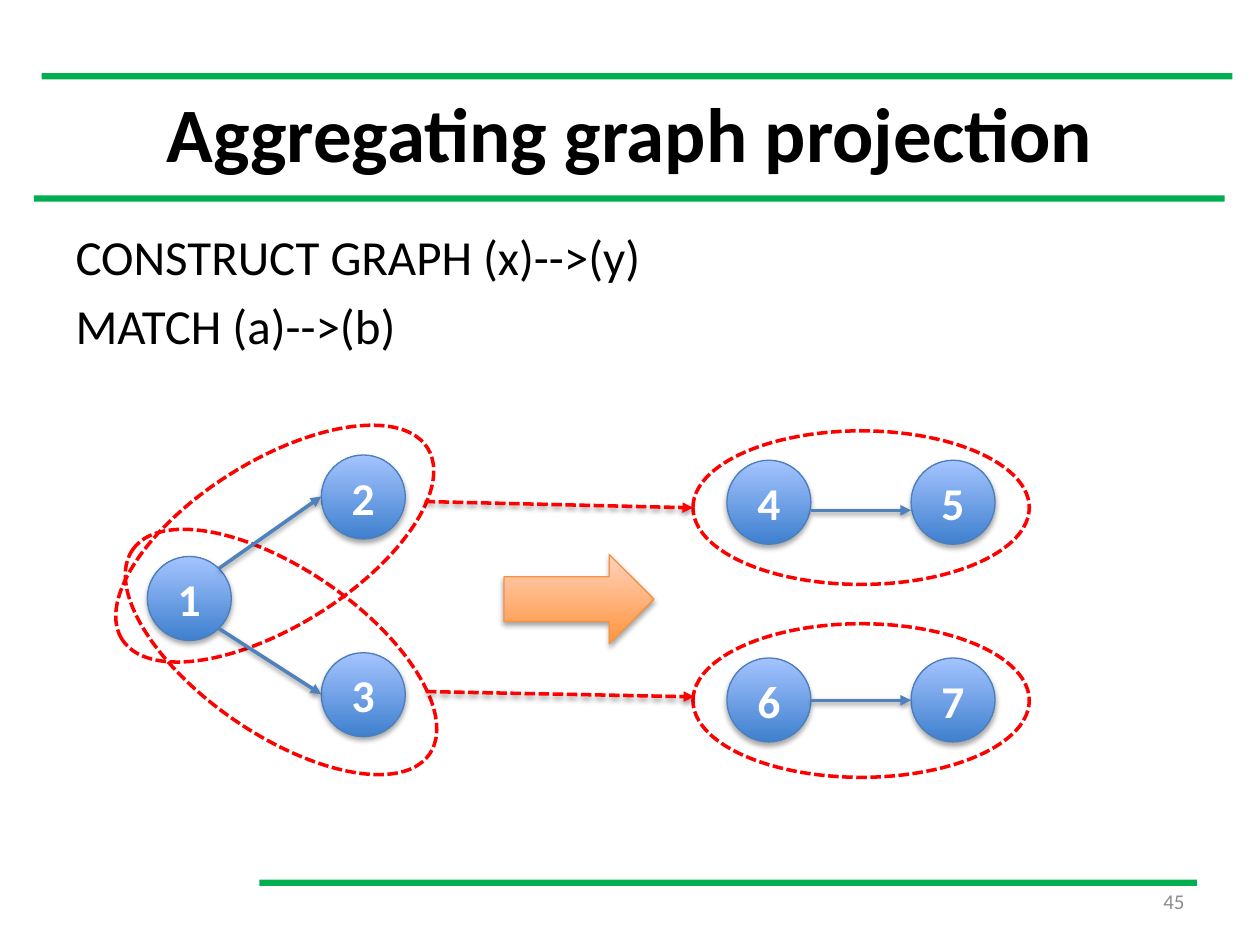
from dataclasses import dataclass

from pptx import Presentation
from pptx import oxml
from pptx import util as u
from pptx.dml import color
from pptx.enum import dml, shapes, text
from pptx.oxml import ns

Pt = u.Pt
RGB = color.RGBColor.from_string


@dataclass(frozen=True)
class Theme:
    font: str = "Calibri"
    ink: str = "000000"
    white: str = "FFFFFF"
    muted: str = "8C8C8C"
    rule: str = "00B050"
    edge: str = "4F81BD"
    group: str = "FF0000"
    node_fill: tuple = ("3F80CE", "A4C4FF")
    node_line: str = "4B7EBC"
    arrow_fill: tuple = ("FF953E", "FFD2BD")
    arrow_line: str = "F69240"
    title_size: int = 44
    body_size: int = 28
    node_size: int = 26
    number_size: int = 12


theme = Theme()


def write_text(para, content, size, ink=theme.ink, bold=False, align=None):
    span = para.add_run()
    span.text = content
    span.font.name = theme.font
    span.font.size = Pt(size)
    span.font.bold = bold
    span.font.color.rgb = RGB(ink)
    para.alignment = align


def add_shadow(shape, distance, opacity):
    """Put a soft black shadow below a shape or connector."""
    properties = shape.element.spPr
    for old in properties.findall(ns.qn("a:effectLst")):
        properties.remove(old)
    properties.append(oxml.parse_xml(
        f'<a:effectLst {ns.nsdecls("a")}><a:outerShdw blurRad="{Pt(3.1)}" '
        f'dist="{Pt(distance)}" dir="5400000" rotWithShape="0">'
        f'<a:srgbClr val="000000"><a:alpha val="{opacity * 1000}"/></a:srgbClr>'
        '</a:outerShdw></a:effectLst>'))


deck = Presentation()
deck.slide_width, deck.slide_height = Pt(720), Pt(540)
page = deck.slides.add_slide(deck.slide_layouts[1])
center = text.PP_ALIGN.CENTER

# Green rules
for left, top, width in [(148.3, 502.6, 535.7), (23.8, 41.8, 680.4), (19.4, 111.6, 680.4)]:
    rule = page.shapes.add_shape(shapes.MSO_SHAPE.RECTANGLE,
                                 Pt(left), Pt(top), Pt(width), Pt(3.6))
    rule.shadow.inherit = False
    rule.fill.solid()
    rule.fill.fore_color.rgb = RGB(theme.rule)
    rule.line.fill.background()

# Title
title = page.shapes.title
title.left, title.top, title.width, title.height = Pt(36), Pt(30), Pt(648), Pt(90)
title.text_frame.vertical_anchor = text.MSO_ANCHOR.MIDDLE
write_text(title.text_frame.paragraphs[0], "Aggregating graph projection",
           theme.title_size, bold=True, align=center)

# Query
query = page.placeholders[1]
query.left, query.top, query.width, query.height = Pt(36), Pt(126), Pt(648), Pt(356.4)
query.text_frame.auto_size = text.MSO_AUTO_SIZE.NONE
for index, line in enumerate(["CONSTRUCT GRAPH (x)-->(y)", "MATCH (a)-->(b)"]):
    para = query.text_frame.add_paragraph() if index else query.text_frame.paragraphs[0]
    para.space_before = Pt(5.6 * index)
    para._p.get_or_add_pPr().append(oxml.parse_xml(f'<a:buNone {ns.nsdecls("a")}/>'))
    write_text(para, line, theme.body_size)

# Graph nodes and the block arrow between the two graphs
oval = shapes.MSO_SHAPE.OVAL
solids = [(oval, label, left, top, 48, 48, theme.node_fill, theme.node_line)
          for label, left, top in [
              ("1", 84.2, 318), ("2", 183.6, 260), ("3", 183.6, 373),
              ("4", 415.4, 263), ("5", 520.6, 263),
              ("6", 415.4, 376), ("7", 520.6, 376)]]
solids.append((shapes.MSO_SHAPE.RIGHT_ARROW, "", 288, 316.8, 85.7, 51.1,
               theme.arrow_fill, theme.arrow_line))
for kind, label, left, top, width, height, stops, outline in solids:
    solid = page.shapes.add_shape(kind, Pt(left), Pt(top), Pt(width), Pt(height))
    solid.fill.gradient()
    solid.fill.gradient_angle = 90
    for stop, tint in zip(solid.fill.gradient_stops, stops):
        stop.color.rgb = RGB(tint)
    solid.line.color.rgb = RGB(outline)
    solid.line.width = Pt(0.75)
    add_shadow(solid, 1.8, 35)
    if label:
        solid.text_frame.vertical_anchor = text.MSO_ANCHOR.MIDDLE
        write_text(solid.text_frame.paragraphs[0], label, theme.node_size,
                   ink=theme.white, bold=True, align=center)

# Dashed groups around the matched and constructed pairs
for left, top, width, height, angle in [
        (54, 263.5, 206, 94.3, 328), (57.6, 325.4, 206, 94.3, 34.5),
        (396, 246.2, 192.2, 87.8, 0), (396, 356.4, 192.2, 87.8, 0)]:
    group = page.shapes.add_shape(oval, Pt(left), Pt(top), Pt(width), Pt(height))
    group.rotation = angle
    group.shadow.inherit = False
    group.fill.background()
    group.line.color.rgb = RGB(theme.group)
    group.line.width = Pt(2)
    group.line.dash_style = dml.MSO_LINE.SQUARE_DOT

# Edges within the graphs, and dashed links from group to group
for x1, y1, x2, y2, dashed in [
        (125.3, 324.7, 183.6, 283.7, False), (125.3, 359.3, 183.6, 396.7, False),
        (463.6, 291.6, 520.6, 291.6, False), (463.6, 400.2, 520.6, 400.2, False),
        (242.6, 286.6, 396, 290.2, True), (243.4, 395.2, 396.7, 398.2, True)]:
    edge = page.shapes.add_connector(shapes.MSO_CONNECTOR.STRAIGHT,
                                     Pt(x1), Pt(y1), Pt(x2), Pt(y2))
    edge.line.color.rgb = RGB(theme.group if dashed else theme.edge)
    edge.line.width = Pt(2)
    if dashed:
        edge.line.dash_style = dml.MSO_LINE.SQUARE_DOT
    edge.element.spPr.find(ns.qn("a:ln")).append(
        oxml.parse_xml(f'<a:tailEnd {ns.nsdecls("a")} type="triangle"/>'))
    add_shadow(edge, 1.6, 38)

# Page number
number = page.shapes.add_textbox(Pt(516), Pt(500.4), Pt(168), Pt(28.8))
number.text_frame.word_wrap = True
number.text_frame.vertical_anchor = text.MSO_ANCHOR.MIDDLE
write_text(number.text_frame.paragraphs[0], "45", theme.number_size,
           ink=theme.muted, align=text.PP_ALIGN.RIGHT)

deck.save("out.pptx")
